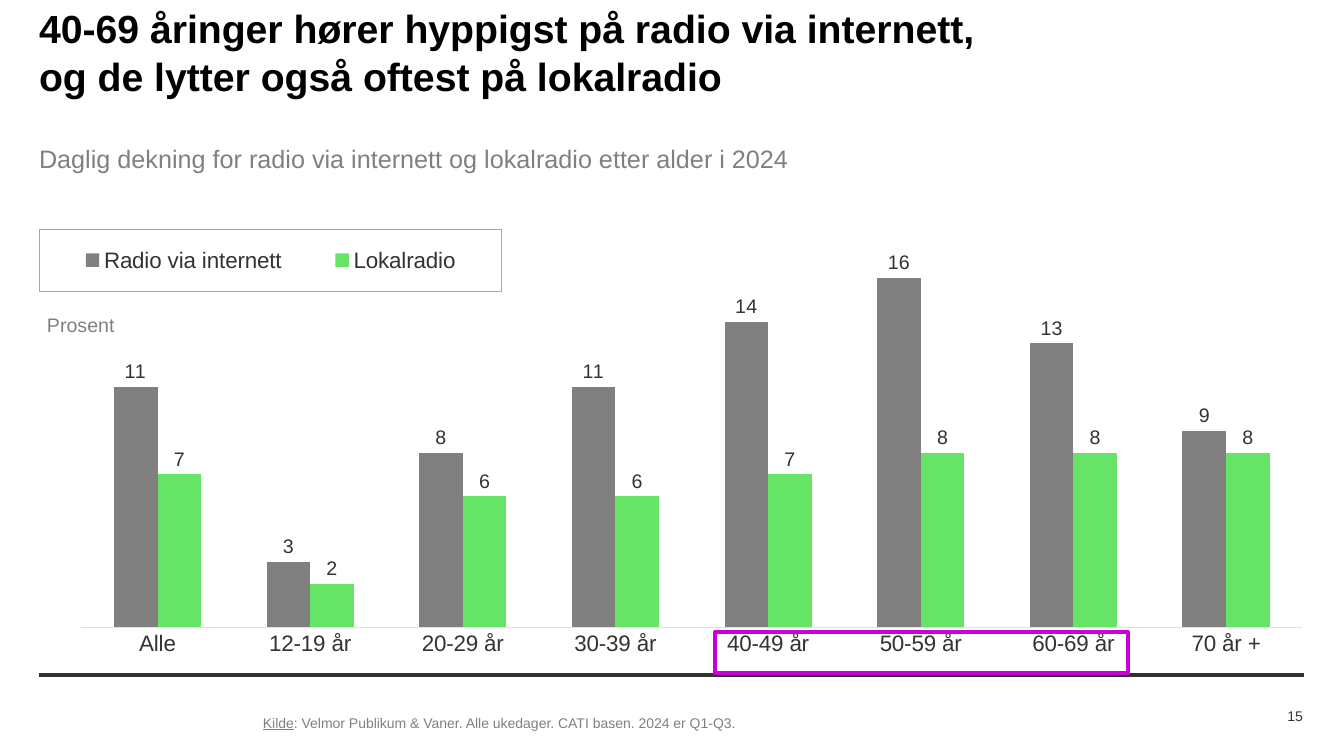
from lxml import etree
from pptx import Presentation
from pptx import util as u
from pptx.chart.data import CategoryChartData
from pptx.dml.color import RGBColor
from pptx.enum import chart as ch, shapes, text
from pptx.oxml.ns import qn

EMU_PER_PX = 914400 / 100.8
FONT = "Arial"
BLACK = RGBColor(0x00, 0x00, 0x00)
DARK = RGBColor(0x33, 0x33, 0x33)
GRAY = RGBColor(0x80, 0x80, 0x80)
BORDER = RGBColor(0xA6, 0xA6, 0xA6)
AXIS = RGBColor(0xE0, 0xE0, 0xE0)
GREEN = RGBColor(0x66, 0xE4, 0x66)
PURPLE = RGBColor(0xC7, 0x00, 0xD3)

AGES = ["Alle", "12-19 år", "20-29 år", "30-39 år",
        "40-49 år", "50-59 år", "60-69 år", "70 år +"]
SERIES = [("Radio via internett", GRAY, [11, 3, 8, 11, 14, 16, 13, 9]),
          ("Lokalradio", GREEN, [7, 2, 6, 6, 7, 8, 8, 8])]


def px(length):
    return u.Emu(round(length * EMU_PER_PX))


def style(font, size, color, bold=False):
    font.name, font.size, font.bold = FONT, u.Pt(size), bold
    font.color.rgb = color


def add_text(page, box, spans, size, color, bold=False, wrap=True,
             anchor=text.MSO_ANCHOR.TOP, align=text.PP_ALIGN.LEFT):
    """Add a text box without insets; return its first paragraph and frame."""
    frame = page.shapes.add_textbox(*map(px, box)).text_frame
    frame.margin_left = frame.margin_right = 0
    frame.margin_top = frame.margin_bottom = 0
    frame.word_wrap, frame.vertical_anchor = wrap, anchor
    para = frame.paragraphs[0]
    para.alignment = align
    for words in spans:
        para.add_run().text = words
    style(para.font, size, color, bold)
    return para, frame


def add_heading(page, box):
    first, frame = add_text(
        page, box, ["40-69 åringer hører hyppigst på radio via internett,"],
        28, BLACK, bold=True)
    second = frame.add_paragraph()
    second.text = "og de lytter også oftest på lokalradio"
    style(second.font, 28, BLACK, bold=True)
    first.line_spacing = second.line_spacing = 1.04
    subtitle = frame.add_paragraph()
    subtitle.text = "Daglig dekning for radio via internett og lokalradio etter alder i 2024"
    subtitle.space_before = u.Pt(31)
    style(subtitle.font, 18, GRAY)


def set_layout(parent, index, fractions, inner=False):
    """Give a chart part a manual place, as fractions of the chart."""
    for old in parent.findall(qn("c:layout")):
        parent.remove(old)
    layout = etree.Element(qn("c:layout"))
    manual = etree.SubElement(layout, qn("c:manualLayout"))
    settings = [("layoutTarget", "inner")] if inner else []
    settings += [("xMode", "edge"), ("yMode", "edge")]
    settings += zip("xywh", map(str, fractions))
    for tag, value in settings:
        etree.SubElement(manual, qn("c:" + tag)).set("val", value)
    parent.insert(index, layout)


def add_legend(chart, fractions):
    chart.has_legend = True
    legend = chart.legend
    legend.position = ch.XL_LEGEND_POSITION.RIGHT
    legend.include_in_layout = False
    style(legend.font, 16, DARK)
    element = legend._element
    set_layout(element, 1, fractions)
    border = etree.Element(qn("c:spPr"))
    line = etree.SubElement(border, qn("a:ln"), w=str(u.Pt(0.75)))
    fill = etree.SubElement(line, qn("a:solidFill"))
    etree.SubElement(fill, qn("a:srgbClr"), val=str(BORDER))
    element.find(qn("c:txPr")).addprevious(border)


def add_age_chart(page, box):
    data = CategoryChartData(number_format="0")
    data.categories = AGES
    for name, _, values in SERIES:
        data.add_series(name, values)
    chart = page.shapes.add_chart(
        ch.XL_CHART_TYPE.COLUMN_CLUSTERED, *map(px, box), data).chart
    chart.has_title = False
    style(chart.font, 10, DARK)

    ages = chart.category_axis
    ages.major_tick_mark = ch.XL_TICK_MARK.NONE
    ages.format.line.color.rgb = AXIS
    ages.format.line.width = u.Pt(0.75)
    style(ages.tick_labels.font, 16, DARK)
    percent = chart.value_axis
    percent.minimum_scale, percent.maximum_scale = 0, 20
    percent.has_major_gridlines = False
    percent.visible = False

    plot = chart.plots[0]
    plot.gap_width, plot.overlap, plot.vary_by_categories = 150, 0, False
    for series, (_, color, _) in zip(plot.series, SERIES):
        series.format.fill.solid()
        series.format.fill.fore_color.rgb = color
        labels = series.data_labels
        labels.show_value = True
        labels.number_format, labels.number_format_is_linked = "0", False
        labels.position = ch.XL_LABEL_POSITION.OUTSIDE_END
        style(labels.font, 14, DARK)
    set_layout(chart._chartSpace.chart.plotArea, 0, (0.033, 0.033, 0.967, 0.872), inner=True)
    add_legend(chart, (0, 0.11, 0.366, 0.124))

    left, top = box[:2]
    add_text(page, (left + 8, top + 139, 68, 24), ["Prosent"], 14, GRAY, wrap=False)


def add_highlight(page, box):
    frame = page.shapes.add_shape(shapes.MSO_SHAPE.RECTANGLE, *map(px, box))
    frame.shadow.inherit = False
    frame.fill.background()
    frame.line.color.rgb, frame.line.width = PURPLE, u.Pt(3)


def add_rule(page, left, right, y):
    rule = page.shapes.add_connector(
        shapes.MSO_CONNECTOR.STRAIGHT, px(left), px(y), px(right), px(y))
    rule.line.color.rgb, rule.line.width = DARK, u.Pt(3)
    etree.SubElement(rule._element.spPr, qn("a:effectLst"))


def add_footer(page, box):
    left, top, width, height = box
    middle = text.MSO_ANCHOR.MIDDLE
    source, _ = add_text(
        page, (left + 224, top, width - 224, height),
        ["Kilde", ": Velmor Publikum & Vaner. Alle ukedager. CATI basen. 2024 er Q1-Q3."],
        10, GRAY, anchor=middle)
    source.runs[0].font.underline = True
    add_text(page, (left + width - 107, top + 3, 107, 22), ["15"], 10, DARK,
             anchor=middle, align=text.PP_ALIGN.RIGHT)


def main():
    deck = Presentation()
    deck.slide_width, deck.slide_height = px(1344), px(756)
    page = deck.slides.add_slide(deck.slide_layouts[6])
    add_rule(page, 39, 1304, 675)
    add_age_chart(page, (39, 174, 1264, 501))
    add_heading(page, (39, 2, 1264, 170))
    add_highlight(page, (715, 632, 413, 41))
    add_footer(page, (39, 702, 1264, 41))
    deck.save("out.pptx")


if __name__ == "__main__":
    main()
